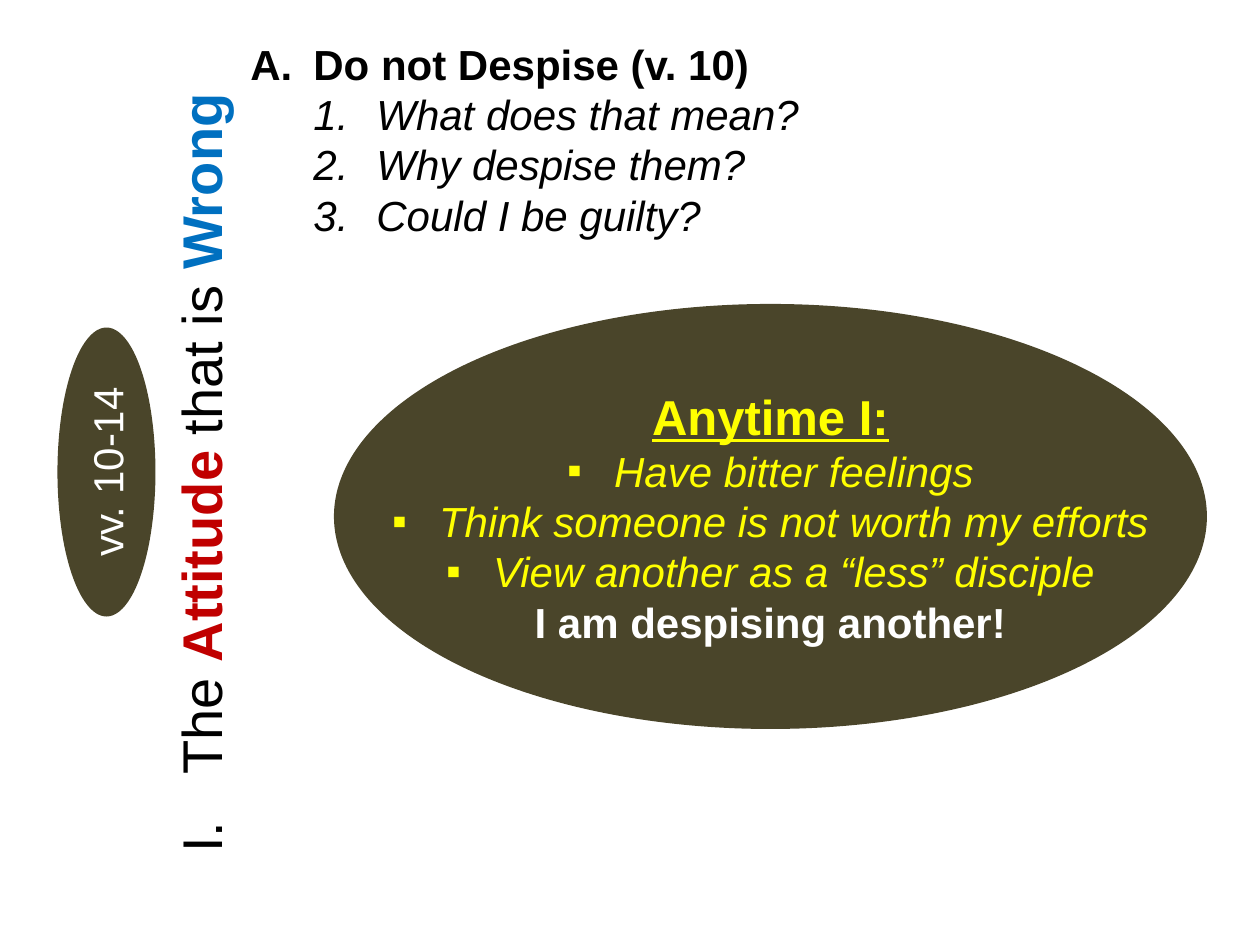
"""Build a sermon outline slide with a rotated heading and a call-out ellipse."""
from dataclasses import dataclass

from lxml.etree import SubElement
from pptx import Presentation
from pptx.dml.color import RGBColor
from pptx.enum.shapes import MSO_SHAPE as Shape
from pptx.enum.text import MSO_ANCHOR as Anchor, PP_ALIGN as Align
from pptx.oxml.ns import qn
from pptx.util import Emu, Pt

PX = 914400 // 126


@dataclass(frozen=True)
class Theme:
    font: str = "Arial"
    black: str = "000000"
    white: str = "FFFFFF"
    red: str = "C00000"
    blue: str = "0070C0"
    yellow: str = "FFFF00"
    olive: str = "4A452A"
    heading: int = 32
    callout: int = 28
    body: int = 24


THEME = Theme()

HEADING = [
    ("The ", {}),
    ("Attitude", {"color": THEME.red, "bold": True}),
    (" that is ", {}),
    ("Wrong", {"color": THEME.blue, "bold": True}),
]
VERSES = "vv. 10-14"
POINT = "Do not Despise (v. 10)"
QUESTIONS = ["What does that mean?", "Why despise them?", "Could I be guilty?"]
CALLOUT = "Anytime I:"
SIGNS = [
    "Have bitter feelings",
    "Think someone is not worth my efforts",
    "View another as a “less” disciple",
]
CONCLUSION = "I am despising another!"

BOXES = {
    "heading": (-295, 422, 945, 102),
    "verses": (-38, 423, 289, 98),
    "outline": (238, 32, 969, 217),
    "callout": (334, 304, 873, 425),
}


def place(name):
    return [Emu(length * PX) for length in BOXES[name]]


def add_box(slide, name, rotation=0, wrap=True):
    shape = slide.shapes.add_textbox(*place(name))
    shape.rotation = rotation
    shape.text_frame.word_wrap = wrap
    return shape


def add_ellipse(slide, name, rotation=0, wrap=True):
    shape = slide.shapes.add_shape(Shape.OVAL, *place(name))
    shape.rotation = rotation
    shape.shadow.inherit = False
    shape.fill.solid()
    shape.fill.fore_color.rgb = RGBColor.from_string(THEME.olive)
    shape.line.fill.background()
    shape.text_frame.word_wrap = wrap
    shape.text_frame.vertical_anchor = Anchor.MIDDLE
    return shape


def set_bullet(paragraph, bullet, indent, hanging):
    properties = paragraph._p.get_or_add_pPr()
    properties.set("marL", str(indent * PX))
    properties.set("indent", str(-hanging * PX))
    if bullet.endswith("Period"):
        SubElement(properties, qn("a:buFont"), typeface="+mj-lt")
        SubElement(properties, qn("a:buAutoNum"), type=bullet)
    else:
        SubElement(properties, qn("a:buFont"), typeface=THEME.font)
        SubElement(properties, qn("a:buChar"), char=bullet)


def write(shape, text, size=THEME.body, color=THEME.black, bold=False, italic=False,
          underline=False, align=Align.LEFT, level=0, bullet=None, indent=0,
          hanging=0, spacing=None):
    frame = shape.text_frame
    paragraph = frame.paragraphs[0] if not frame.text else frame.add_paragraph()
    paragraph.alignment = align
    paragraph.level = level
    if spacing:
        paragraph.line_spacing = spacing
    if bullet:
        set_bullet(paragraph, bullet, indent, hanging)
    base = {"color": color, "bold": bold}
    for words, changes in [(text, {})] if isinstance(text, str) else text:
        look = {**base, **changes}
        run = paragraph.add_run()
        run.text = words
        run.font.name = THEME.font
        run.font.size = Pt(size)
        run.font.bold = look["bold"]
        run.font.italic = italic
        run.font.underline = underline
        run.font.color.rgb = RGBColor.from_string(look["color"])


def main():
    presentation = Presentation()
    presentation.slide_width = Emu(1260 * PX)
    presentation.slide_height = Emu(945 * PX)
    slide = presentation.slides.add_slide(presentation.slide_layouts[6])

    heading = add_box(slide, "heading", rotation=270)
    write(heading, HEADING, size=THEME.heading, align=Align.CENTER, spacing=1.5,
          bullet="romanUcPeriod", indent=78, hanging=78)

    verses = add_ellipse(slide, "verses", rotation=270)
    write(verses, VERSES, color=THEME.white, align=Align.CENTER)

    outline = add_box(slide, "outline")
    write(outline, POINT, bold=True, bullet="alphaUcPeriod", indent=63, hanging=63)
    for question in QUESTIONS:
        write(outline, question, italic=True, level=1, bullet="arabicPeriod",
              indent=126, hanging=63)

    callout = add_ellipse(slide, "callout", wrap=False)
    write(callout, CALLOUT, size=THEME.callout, color=THEME.yellow, bold=True,
          underline=True, align=Align.CENTER)
    for sign in SIGNS:
        write(callout, sign, color=THEME.yellow, italic=True, align=Align.CENTER,
              bullet="▪", indent=47, hanging=47)
    write(callout, CONCLUSION, color=THEME.white, bold=True, align=Align.CENTER)

    presentation.save("out.pptx")


if __name__ == "__main__":
    main()
